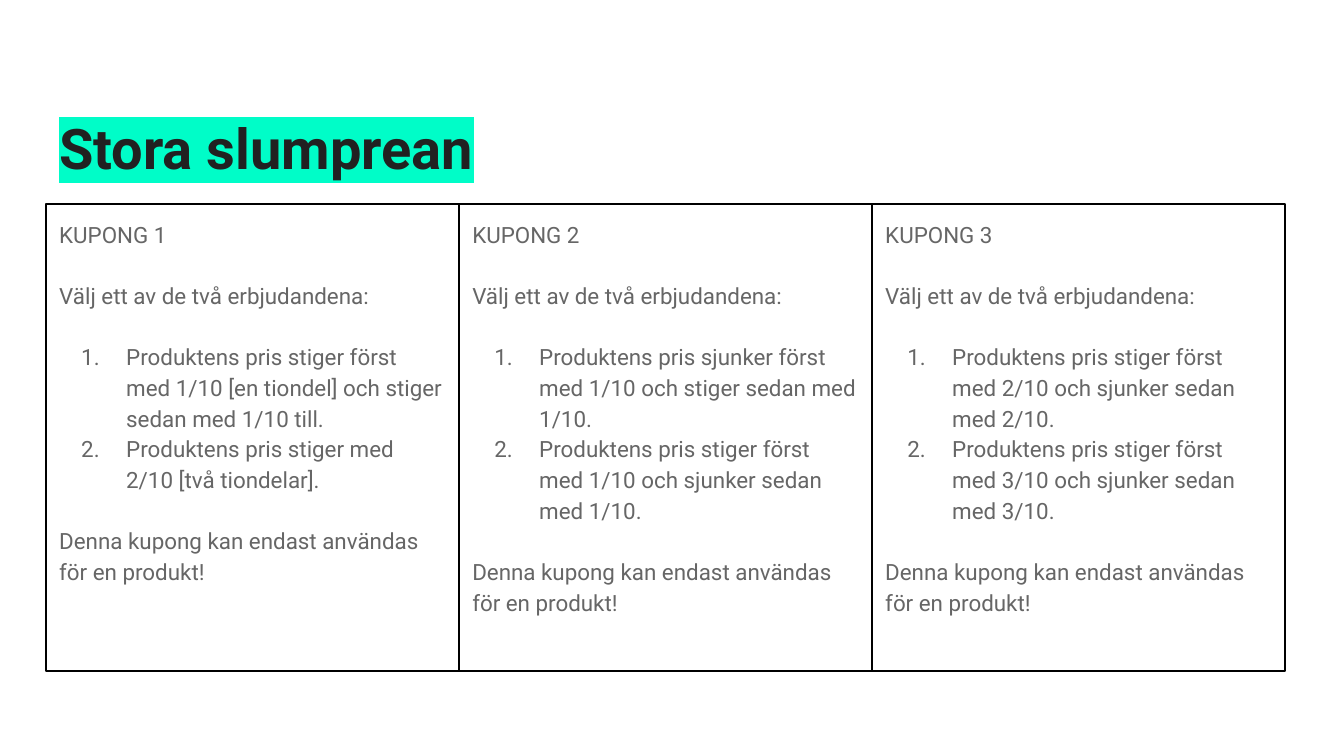
from lxml import etree
from pptx import Presentation
from pptx import util as u
from pptx.dml.color import RGBColor
from pptx.enum import shapes, text
from pptx.oxml import ns

PX = 914400 / 134.4
COLORS = {"title": "212121", "highlight": "00FDC8", "body": "666666", "border": "000000"}
COUPONS = [
    ("Produktens pris stiger först med 1/10 [en tiondel] och stiger sedan med 1/10 till.",
     "Produktens pris stiger med 2/10 [två tiondelar]."),
    ("Produktens pris sjunker först med 1/10 och stiger sedan med 1/10.",
     "Produktens pris stiger först med 1/10 och sjunker sedan med 1/10."),
    ("Produktens pris stiger först med 2/10 och sjunker sedan med 2/10.",
     "Produktens pris stiger först med 3/10 och sjunker sedan med 3/10."),
]
LEFT, TOP, WIDTH, HEIGHT = 46, 204, 413, 467


def px(length):
    return round(length * PX)


def add_run(paragraph, words, size, color, bold=False):
    run = paragraph.add_run()
    run.text = words
    run.font.size = u.Pt(size)
    run.font.name = "Roboto"
    run.font.bold = bold
    run.font.color.rgb = RGBColor.from_string(COLORS[color])
    return run


prs = Presentation()
prs.slide_width, prs.slide_height = px(1344), px(756)
slide = prs.slides.add_slide(prs.slide_layouts[6])

title = slide.shapes.add_textbox(px(LEFT), px(82), px(665), px(112))
frame = title.text_frame
frame.word_wrap = True
frame.vertical_anchor = text.MSO_ANCHOR.BOTTOM
frame.margin_left = frame.margin_right = frame.margin_top = frame.margin_bottom = u.Inches(0.1)
heading = add_run(frame.paragraphs[0], "Stora slumprean", 30, "title", True)
highlight = etree.Element(ns.qn("a:highlight"))
etree.SubElement(highlight, ns.qn("a:srgbClr"), val=COLORS["highlight"])
heading.font._element.find(ns.qn("a:solidFill")).addnext(highlight)

for column, (first_offer, second_offer) in enumerate(COUPONS):
    coupon = slide.shapes.add_shape(
        shapes.MSO_SHAPE.RECTANGLE, px(LEFT + column * WIDTH), px(TOP), px(WIDTH), px(HEIGHT))
    coupon.shadow.inherit = False
    coupon.fill.background()
    coupon.line.color.rgb = RGBColor.from_string(COLORS["border"])
    coupon.line.width = u.Pt(0.75)
    frame = coupon.text_frame
    frame.word_wrap = True
    frame.vertical_anchor = text.MSO_ANCHOR.TOP
    frame.margin_left = frame.margin_right = frame.margin_top = frame.margin_bottom = u.Inches(0.1)
    lines = [
        (f"KUPONG {column + 1}", 0, False),
        ("Välj ett av de två erbjudandena:", 16, False),
        (first_offer, 16, True),
        (second_offer, 0, True),
        ("Denna kupong kan endast användas för en produkt!", 16, False),
    ]
    for row, (words, space, numbered) in enumerate(lines):
        paragraph = frame.add_paragraph() if row else frame.paragraphs[0]
        paragraph.alignment = text.PP_ALIGN.LEFT
        paragraph.line_spacing = 1.15
        paragraph.space_before = u.Pt(space)
        add_run(paragraph, words, 12, "body")
        if numbered:
            props = paragraph._p.get_or_add_pPr()
            props.set("marL", str(px(67)))
            props.set("indent", str(px(-45)))
            number_color = etree.SubElement(props, ns.qn("a:buClr"))
            etree.SubElement(number_color, ns.qn("a:srgbClr"), val=COLORS["body"])
            etree.SubElement(props, ns.qn("a:buFont"), typeface="Roboto")
            etree.SubElement(props, ns.qn("a:buAutoNum"), type="arabicPeriod")

prs.save("out.pptx")
